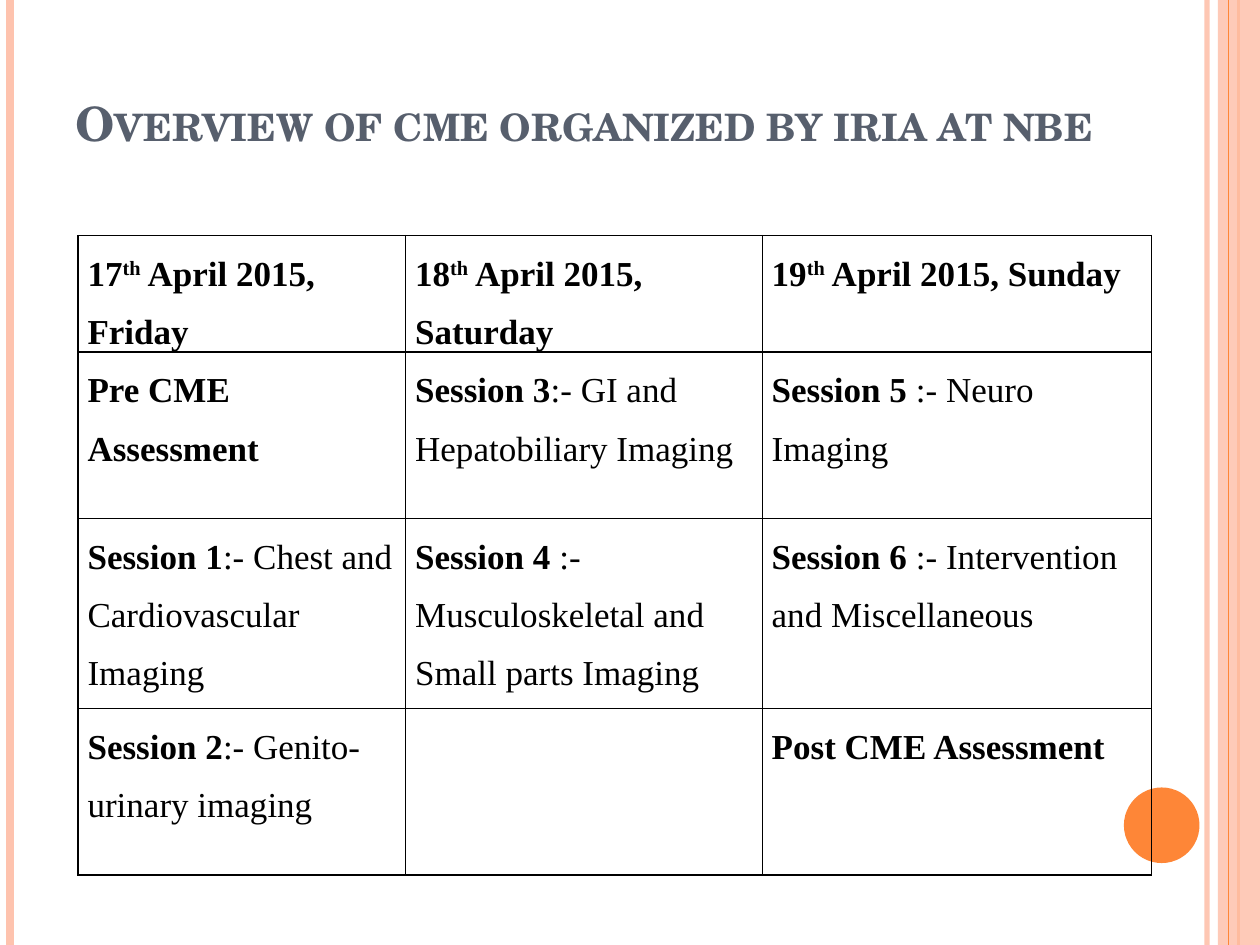
from dataclasses import dataclass

from lxml.etree import SubElement
from pptx import Presentation
from pptx.dml.color import RGBColor
from pptx.enum.shapes import MSO_CONNECTOR, MSO_SHAPE
from pptx.enum.text import MSO_ANCHOR
from pptx.oxml.ns import qn
from pptx.util import Pt


@dataclass(frozen=True)
class Theme:
    peach: str = "FEC3AE"
    orange: str = "FE8637"
    slate: str = "575F6D"
    black: str = "000000"
    title_font: str = "TeX Gyre Schola"
    table_font: str = "Times New Roman"
    title_size: float = 27
    table_size: float = 20


@dataclass(frozen=True)
class Stripe:
    x: float
    color: str
    width: float
    opacity: int = 100


@dataclass(frozen=True)
class Panel:
    preset: MSO_SHAPE
    left: float
    top: float
    width: float
    height: float
    color: str
    opacity: int = 100


@dataclass(frozen=True)
class Phrase:
    text: str
    bold: bool = True
    raised: bool = False


THEME = Theme()
SLIDE_WIDTH, SLIDE_HEIGHT = 720, 540

DECOR = (
    Stripe(689.76, THEME.peach, 3, 93),
    Stripe(5.76, THEME.peach, 4.5),
    Stripe(707.76, THEME.orange, 1.5),
    Panel(MSO_SHAPE.RECTANGLE, 696, 0, 24, SLIDE_HEIGHT, THEME.peach, 87),
    Stripe(702, THEME.orange, 0.75),
    Panel(MSO_SHAPE.OVAL, 642.24, 450, 43.2, 43.2, THEME.orange),
)


def day(number: int, rest: str) -> tuple[Phrase, ...]:
    return Phrase(str(number)), Phrase("th", raised=True), Phrase(f" April 2015, {rest}")


def session(number: int, topic: str) -> tuple[Phrase, ...]:
    return Phrase(f"Session {number}"), Phrase(topic, bold=False)


def assessment(stage: str) -> tuple[Phrase, ...]:
    return (Phrase(f"{stage} CME Assessment"),)


COLUMN_WIDTHS = (187.2, 203.76, 222.48)
ROW_HEIGHTS = (61.92, 95.04, 108.72, 95.04)
PROGRAMME = (
    (day(17, "Friday"), day(18, "Saturday"), day(19, "Sunday")),
    (assessment("Pre"),
     session(3, ":- GI and Hepatobiliary Imaging"),
     session(5, " :- Neuro Imaging")),
    (session(1, ":- Chest and Cardiovascular Imaging"),
     session(4, " :- Musculoskeletal and Small parts Imaging"),
     session(6, " :- Intervention and Miscellaneous")),
    (session(2, ":- Genito-urinary imaging"), (), assessment("Post")),
)


def set_opacity(properties, percent: int) -> None:
    """Add an alpha value to the first solid colour below the properties."""
    if percent < 100:
        color = next(properties.iter(qn("a:srgbClr")))
        SubElement(color, qn("a:alpha"), val=str(percent * 1000))


def draw_stripe(slide, stripe: Stripe) -> None:
    x = Pt(stripe.x)
    connector = slide.shapes.add_connector(
        MSO_CONNECTOR.STRAIGHT, x, Pt(0), x, Pt(SLIDE_HEIGHT))
    connector.line.color.rgb = RGBColor.from_string(stripe.color)
    connector.line.width = Pt(stripe.width)
    properties = connector._element.spPr
    set_opacity(properties, stripe.opacity)
    SubElement(properties, qn("a:effectLst"))


def draw_panel(slide, panel: Panel) -> None:
    shape = slide.shapes.add_shape(
        panel.preset, Pt(panel.left), Pt(panel.top), Pt(panel.width), Pt(panel.height))
    shape.shadow.inherit = False
    shape.fill.solid()
    shape.fill.fore_color.rgb = RGBColor.from_string(panel.color)
    shape.line.fill.background()
    set_opacity(shape._element.spPr, panel.opacity)


def style_run(run, font: str, size: float, color: str, bold: bool) -> None:
    run.font.name = font
    run.font.size = Pt(size)
    run.font.color.rgb = RGBColor.from_string(color)
    run.font.bold = bold


def draw_title(slide, wording: str) -> None:
    heading = slide.shapes.add_textbox(Pt(36), Pt(21.6), Pt(644.4), Pt(68.4))
    frame = heading.text_frame
    frame.word_wrap = True
    frame.vertical_anchor = MSO_ANCHOR.BOTTOM
    frame.text = wording
    run = frame.paragraphs[0].runs[0]
    style_run(run, THEME.title_font, THEME.title_size, THEME.slate, True)
    run.font._element.set("cap", "small")


def outline_cell(cell) -> None:
    properties = cell._tc.get_or_add_tcPr()
    for side in ("lnL", "lnR", "lnT", "lnB"):
        border = SubElement(properties, qn(f"a:{side}"), w=str(Pt(1)))
        fill = SubElement(border, qn("a:solidFill"))
        SubElement(fill, qn("a:srgbClr"), val=THEME.black)
    cell.fill.background()


def fill_cell(cell, phrases: tuple[Phrase, ...]) -> None:
    cell.margin_left = cell.margin_right = Pt(5.4)
    cell.margin_top = cell.margin_bottom = Pt(0)
    paragraph = cell.text_frame.paragraphs[0]
    paragraph.line_spacing = 1.5
    paragraph.space_after = Pt(10)
    for phrase in phrases:
        run = paragraph.add_run()
        run.text = phrase.text
        style_run(run, THEME.table_font, THEME.table_size, THEME.black, phrase.bold)
        if phrase.raised:
            run.font._element.set("baseline", "30000")


def draw_programme(slide) -> None:
    table = slide.shapes.add_table(
        len(ROW_HEIGHTS), len(COLUMN_WIDTHS), Pt(44.64), Pt(134.64),
        Pt(sum(COLUMN_WIDTHS)), Pt(sum(ROW_HEIGHTS))).table
    table.first_row = table.horz_banding = False
    for column, width in zip(table.columns, COLUMN_WIDTHS):
        column.width = Pt(width)
    for row, height, entries in zip(table.rows, ROW_HEIGHTS, PROGRAMME):
        row.height = Pt(height)
        for cell, phrases in zip(row.cells, entries):
            outline_cell(cell)
            fill_cell(cell, phrases)


def main() -> None:
    presentation = Presentation()
    presentation.slide_width = Pt(SLIDE_WIDTH)
    presentation.slide_height = Pt(SLIDE_HEIGHT)
    slide = presentation.slides.add_slide(presentation.slide_layouts[6])
    for part in DECOR:
        if isinstance(part, Stripe):
            draw_stripe(slide, part)
        else:
            draw_panel(slide, part)
    draw_programme(slide)
    draw_title(slide, "Overview of cme organized by iria at nbe")
    presentation.save("out.pptx")


if __name__ == "__main__":
    main()
